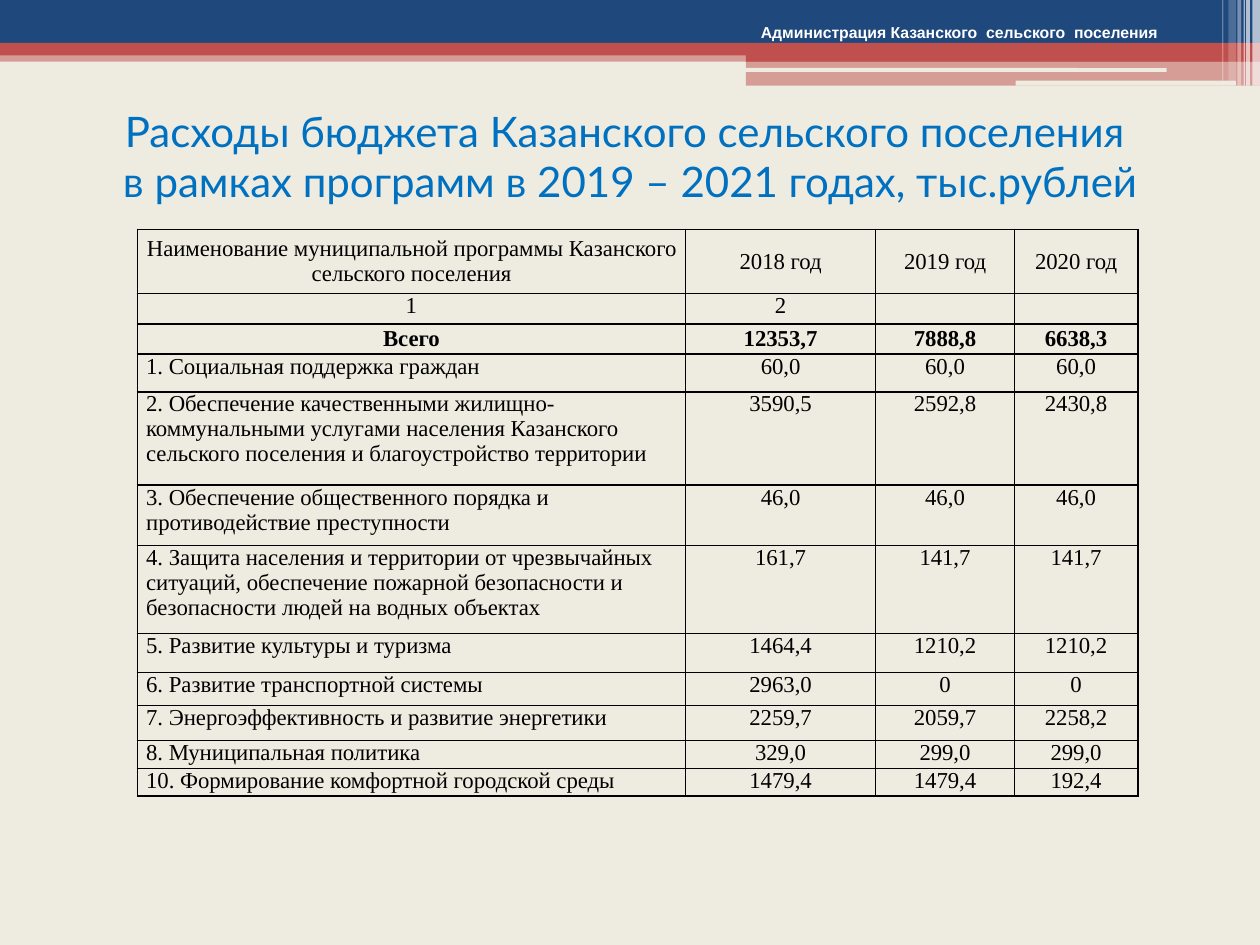
import pptx
import pptx.util
from pptx.dml.color import RGBColor
from pptx.enum.shapes import MSO_SHAPE
from pptx.enum.text import MSO_ANCHOR, MSO_AUTO_SIZE, PP_ALIGN
from pptx.oxml.ns import qn
from lxml import etree

COLORS = {"paper": "EEECE1", "navy": "1F497D", "red": "C0504D", "white": "FFFFFF",
          "title": "0070C0", "black": "000000"}
# The slide is a grid of 1000 columns by 750 rows; boxes are (left, top, width, height).
COLS, ROWS = 1000, 750
UNIT = pptx.util.Inches(10) // COLS

# Box, colour, opacity in percent
BANDS = [
    ((0, 40, 1000, 9), "red", 50),
    ((0, 0, 1000, 34), "navy", 100),
    ((0, 34, 1000, 10), "red", 100),
    ((592, 39, 408, 10), "red", 100),
    ((592, 48, 408, 20), "red", 50),
]
SLOTS = [(591, 54, 335, 3), (806, 64, 175, 4)]
# Left, width, height, opacity of the upright stripes
STRIPES = [(994, 6, 68, 65), (989, 3, 68, 65), (987, 1, 68, 60),
           (982, 3, 68, 40), (975, 6, 64, 20), (970, 1, 64, 30)]

COLUMN_WIDTHS = [435, 151, 110, 98]
ROW_HEIGHTS = [51, 24, 24, 30, 74, 48, 70, 31, 26, 28, 22, 22]
EXPENSES = [
    ("Наименование муниципальной программы Казанского сельского поселения",
     "2018 год", "2019 год", "2020 год"),
    ("1", "2", "", ""),
    ("Всего", "12353,7", "7888,8", "6638,3"),
    ("1. Социальная поддержка граждан", "60,0", "60,0", "60,0"),
    ("2. Обеспечение качественными жилищно-коммунальными услугами населения "
     "Казанского сельского поселения и благоустройство территории",
     "3590,5", "2592,8", "2430,8"),
    ("3. Обеспечение общественного порядка и противодействие преступности",
     "46,0", "46,0", "46,0"),
    ("4. Защита населения и территории от чрезвычайных ситуаций, обеспечение "
     "пожарной безопасности и безопасности людей на водных объектах",
     "161,7", "141,7", "141,7"),
    ("5. Развитие культуры и туризма", "1464,4", "1210,2", "1210,2"),
    ("6. Развитие транспортной системы", "2963,0", "0", "0"),
    ("7. Энергоэффективность и развитие энергетики", "2259,7", "2059,7", "2258,2"),
    ("8. Муниципальная политика", "329,0", "299,0", "299,0"),
    ("10. Формирование комфортной городской среды", "1479,4", "1479,4", "192,4"),
]
HEADER_ROW, TOTAL_ROW, FIRST_PROGRAM_ROW = 0, 2, 3


def rgb(name):
    return RGBColor.from_string(COLORS[name])


def emu(box):
    return [v * UNIT for v in box]


def set_font(p, name, size, color, bold=False):
    p.font.name, p.font.size, p.font.bold = name, pptx.util.Pt(size), bold
    p.font.color.rgb = rgb(color)


def add_block(slide, box, color, opacity=100, kind=MSO_SHAPE.RECTANGLE):
    sp = slide.shapes.add_shape(kind, *emu(box))
    sp.shadow.inherit = False
    sp.fill.solid()
    sp.fill.fore_color.rgb = rgb(color)
    sp.line.fill.background()
    if opacity < 100:
        clr = sp.fill._xPr.find(".//" + qn("a:srgbClr"))
        etree.SubElement(clr, qn("a:alpha"), val=str(opacity * 1000))


def add_banner(slide, box):
    left, top = box[:2]
    for (x, y, w, h), color, opacity in BANDS:
        add_block(slide, (left + x, top + y, w, h), color, opacity)
    for x, y, w, h in SLOTS:
        add_block(slide, (left + x, top + y, w, h), "paper", kind=MSO_SHAPE.ROUNDED_RECTANGLE)
    for x, w, h, opacity in STRIPES:
        add_block(slide, (left + x, top, w, h), "white", opacity)


def add_title(slide, box):
    title = slide.shapes.title
    title.left, title.top, title.width, title.height = emu(box)
    tf = title.text_frame
    tf.text = ("Расходы бюджета Казанского сельского поселения \v"
               "в рамках программ в 2019 – 2021 годах, тыс.рублей")
    tf.vertical_anchor = MSO_ANCHOR.MIDDLE
    p = tf.paragraphs[0]
    p.alignment = PP_ALIGN.CENTER
    set_font(p, "Lato", 24, "title")


def add_office_name(slide, box):
    tf = slide.shapes.add_textbox(*emu(box)).text_frame
    tf.word_wrap = True
    tf.auto_size = MSO_AUTO_SIZE.SHAPE_TO_FIT_TEXT
    tf.text = "Администрация Казанского  сельского  поселения"
    set_font(tf.paragraphs[0], "Arial", 9, "white", bold=True)


def add_borders(cell):
    tc_pr = cell._tc.get_or_add_tcPr()
    for i, side in enumerate(("a:lnL", "a:lnR", "a:lnT", "a:lnB")):
        ln = etree.Element(qn(side), w=str(pptx.util.Pt(1)))
        fill = etree.SubElement(ln, qn("a:solidFill"))
        etree.SubElement(fill, qn("a:srgbClr"), val=COLORS["black"])
        tc_pr.insert(i, ln)


def format_cell(cell, text, row, col):
    cell.fill.background()
    cell.margin_left = cell.margin_right = 7 * UNIT
    cell.margin_top = cell.margin_bottom = 0
    if row in (HEADER_ROW, TOTAL_ROW):
        cell.vertical_anchor = MSO_ANCHOR.MIDDLE
    cell.text = text
    p = cell.text_frame.paragraphs[0]
    is_program_name = row >= FIRST_PROGRAM_ROW and col == 0
    p.alignment = PP_ALIGN.LEFT if is_program_name else PP_ALIGN.CENTER
    set_font(p, "Times New Roman", 13, "black", bold=row == TOTAL_ROW)
    if not text:
        etree.SubElement(p._p, qn("a:endParaRPr"), sz="1300")
    add_borders(cell)


def add_expense_table(slide, left, top):
    box = (left, top, sum(COLUMN_WIDTHS), sum(ROW_HEIGHTS))
    table = slide.shapes.add_table(len(ROW_HEIGHTS), len(COLUMN_WIDTHS), *emu(box)).table
    table.first_row = table.horz_banding = False
    for column, width in zip(table.columns, COLUMN_WIDTHS):
        column.width = width * UNIT
    for row, height in zip(table.rows, ROW_HEIGHTS):
        row.height = height * UNIT
    for r, values in enumerate(EXPENSES):
        for c, text in enumerate(values):
            format_cell(table.cell(r, c), text, r, c)


def main():
    prs = pptx.Presentation()
    prs.slide_width, prs.slide_height = COLS * UNIT, ROWS * UNIT
    slide = prs.slides.add_slide(prs.slide_layouts[5])
    slide.background.fill.solid()
    slide.background.fill.fore_color.rgb = rgb("paper")
    add_banner(slide, (0, 0, COLS, 68))
    add_title(slide, (0, 84, COLS, 79))
    add_office_name(slide, (594, 13, 368, 25))
    add_expense_table(slide, 109, 182)
    prs.save("out.pptx")


if __name__ == "__main__":
    main()
